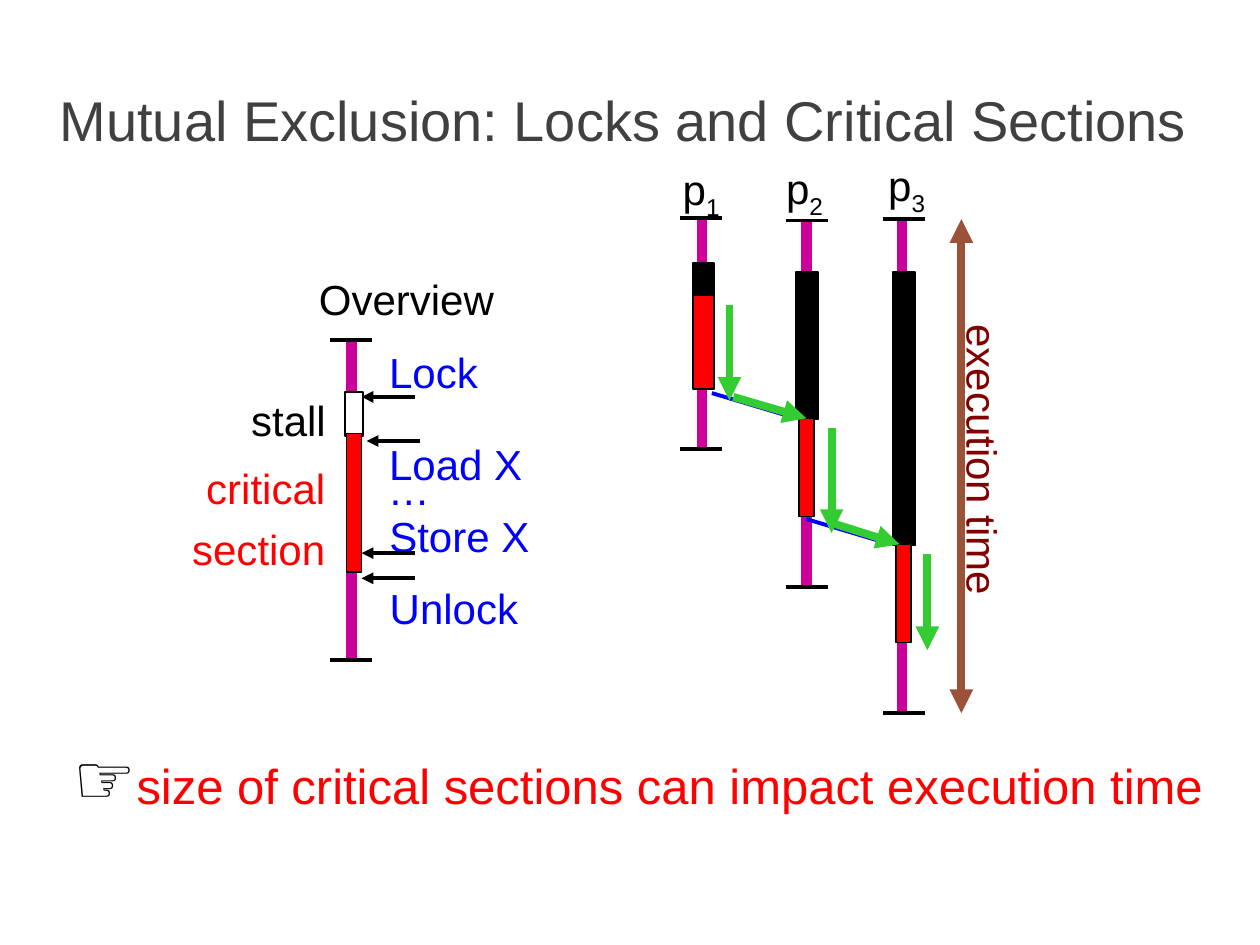
import pptx
import pptx.dml.color
import pptx.enum.shapes
import pptx.enum.text
import pptx.oxml
import pptx.oxml.ns
import pptx.util
from lxml import etree

PX = 9144  # EMU per px, 100 px to the inch
THEME = {
    "font": "Arial", "symbol_font": "Cabin",
    "title_size": 32, "body_size": 24, "note_size": 28, "symbol_size": 40,
    "title": "404040", "black": "000000", "white": "FFFFFF", "red": "FF0000",
    "blue": "0000FF", "magenta": "CC0099", "green": "33CC33",
    "brown": "9C5238", "maroon": "800000",
    "thin": 1, "medium": 2.25, "arrow": 4.5, "bar": 6,
}
ALIGN = pptx.enum.text.PP_ALIGN
LEFT, CENTER, RIGHT = ALIGN.LEFT, ALIGN.CENTER, ALIGN.RIGHT
rgb = pptx.dml.color.RGBColor.from_string

prs = pptx.Presentation()
prs.slide_width, prs.slide_height = 1000 * PX, 750 * PX
s = prs.slides.add_slide(prs.slide_layouts[6])


def add_line(x1, y1, x2, y2, color, width, ends=()):
    """Draw a straight line; ends names the ends that carry a triangle."""
    line = s.shapes.add_connector(pptx.enum.shapes.MSO_CONNECTOR.STRAIGHT,
                                  x1 * PX, y1 * PX, x2 * PX, y2 * PX)
    line.line.color.rgb = rgb(THEME[color])
    line.line.width = pptx.util.Pt(THEME[width])
    ln = line.line._get_or_add_ln()
    for end in ends:
        etree.SubElement(ln, pptx.oxml.ns.qn("a:" + end), type="triangle")
    etree.SubElement(line._element.spPr, pptx.oxml.ns.qn("a:effectLst"))
    return line


def add_text(box, paragraphs, align, color, size="body_size"):
    """Add a text box with one paragraph for each string."""
    sp = s.shapes.add_textbox(*(v * PX for v in box))
    tf = sp.text_frame
    tf.word_wrap = False
    tf.margin_top = 9 * PX
    tf.text = "\n".join(paragraphs)
    for i, p in enumerate(tf.paragraphs):
        p.alignment = align
        if i:
            p.space_before = pptx.util.Pt(6)
        for r in p.runs:
            r.font.name = THEME["font"]
            r.font.size = pptx.util.Pt(THEME[size])
            r.font.color.rgb = rgb(THEME[color])
    return sp


# Title
title = add_text((-14, 19, 1018, 147), ["Mutual Exclusion: Locks and Critical Sections"],
                 CENTER, "title", "title_size")
title.text_frame.word_wrap = True
title.text_frame.vertical_anchor = pptx.enum.text.MSO_ANCHOR.MIDDLE

# Timelines: bar x, cap left, top, bottom, then stall and critical section boxes
timelines = [
    (279, 262, 270, 524, (274, 311, 14, 35), "white", (275, 344, 12, 110)),
    (557, 540, 173, 356, (550, 209, 17, 25), "black", (550, 234, 17, 75)),
    (640, 624, 175, 466, (632, 216, 17, 117), "black", (634, 332, 12, 78)),
    (716, 701, 174, 566, (709, 216, 17, 217), "black", (711, 432, 12, 78)),
]
critical = []
for x, cap, top, bottom, stall_box, stall_fill, critical_box in timelines:
    add_line(x, top, x, bottom, "magenta", "bar")
    for y in (top, bottom):
        add_line(cap, y, cap + 33, y, "black", "medium")
    for box, fill in ((stall_box, stall_fill), (critical_box, "red")):
        sp = s.shapes.add_shape(pptx.enum.shapes.MSO_SHAPE.RECTANGLE,
                                *(v * PX for v in box))
        sp.shadow.inherit = False
        sp.fill.solid()
        sp.fill.fore_color.rgb = rgb(THEME[fill])
        sp.line.color.rgb = rgb(THEME["black"])
        sp.line.width = pptx.util.Pt(THEME["thin"])
    critical.append(sp)

# Overview labels and their pointers
add_text((243, 208, 159, 50), ["Overview"], CENTER, "black")
add_text((189, 304, 80, 50), ["stall"], CENTER, "black")
add_text((142, 358, 126, 98), ["critical", "section"], RIGHT, "red")
for box, label, align in [
    ((299, 266, 91, 50), "Lock", LEFT),
    ((299, 339, 126, 50), "Load X", LEFT),
    ((298, 359, 53, 50), "…", CENTER),
    ((299, 396, 131, 50), "Store X", RIGHT),
    ((299, 453, 122, 50), "Unlock", RIGHT),
]:
    add_text(box, [label], align, "blue")
for x, y in [(287, 315), (291, 350), (287, 439), (287, 459)]:
    add_line(x + 42, y, x, y, "black", "medium", ["tailEnd"])

# Processor names
for i, (x, y) in enumerate([(531, 121), (613, 120), (694, 118)], 1):
    sp = add_text((x, y, 51, 50), ["p"], CENTER, "black")
    r = sp.text_frame.paragraphs[0].add_run()
    r.text = str(i)
    r.font.name = THEME["font"]
    r.font.size = pptx.util.Pt(THEME["body_size"])
    r.font.color.rgb = rgb(THEME["black"])
    r._r.get_or_add_rPr().set("baseline", "-25000")

# Lock hand-over between processors
for x, y in [(565, 312), (640, 412)]:
    add_line(x, y, x + 67, y + 20, "blue", "medium", ["tailEnd"])

# Path through the critical sections
for x, top, bottom in [(579, 242, 318), (660, 340, 423), (736, 440, 516)]:
    add_line(x, top, x, bottom, "green", "arrow", ["tailEnd"])
handover = add_line(582, 315, 640, 332, "green", "arrow", ["tailEnd"])
handover.end_connect(critical[2], 0)
add_line(663, 416, 714, 432, "green", "arrow", ["tailEnd"])

# Execution time
add_line(763, 174, 763, 566, "brown", "arrow", ["headEnd", "tailEnd"])
sp = add_text((667, 340, 235, 50), ["execution time"], CENTER, "maroon")
sp.rotation = 90

# Conclusion
note = add_text((8, 576, 997, 77), ["☞"], CENTER, "black", "symbol_size")
note.text_frame.vertical_anchor = pptx.enum.text.MSO_ANCHOR.MIDDLE
p = note.text_frame.paragraphs[0]
p.runs[0].font.name = THEME["symbol_font"]
r = p.add_run()
r.text = "size of critical sections can impact execution time"
r.font.name = THEME["font"]
r.font.size = pptx.util.Pt(THEME["note_size"])
r.font.color.rgb = rgb(THEME["red"])

prs.save("out.pptx")
